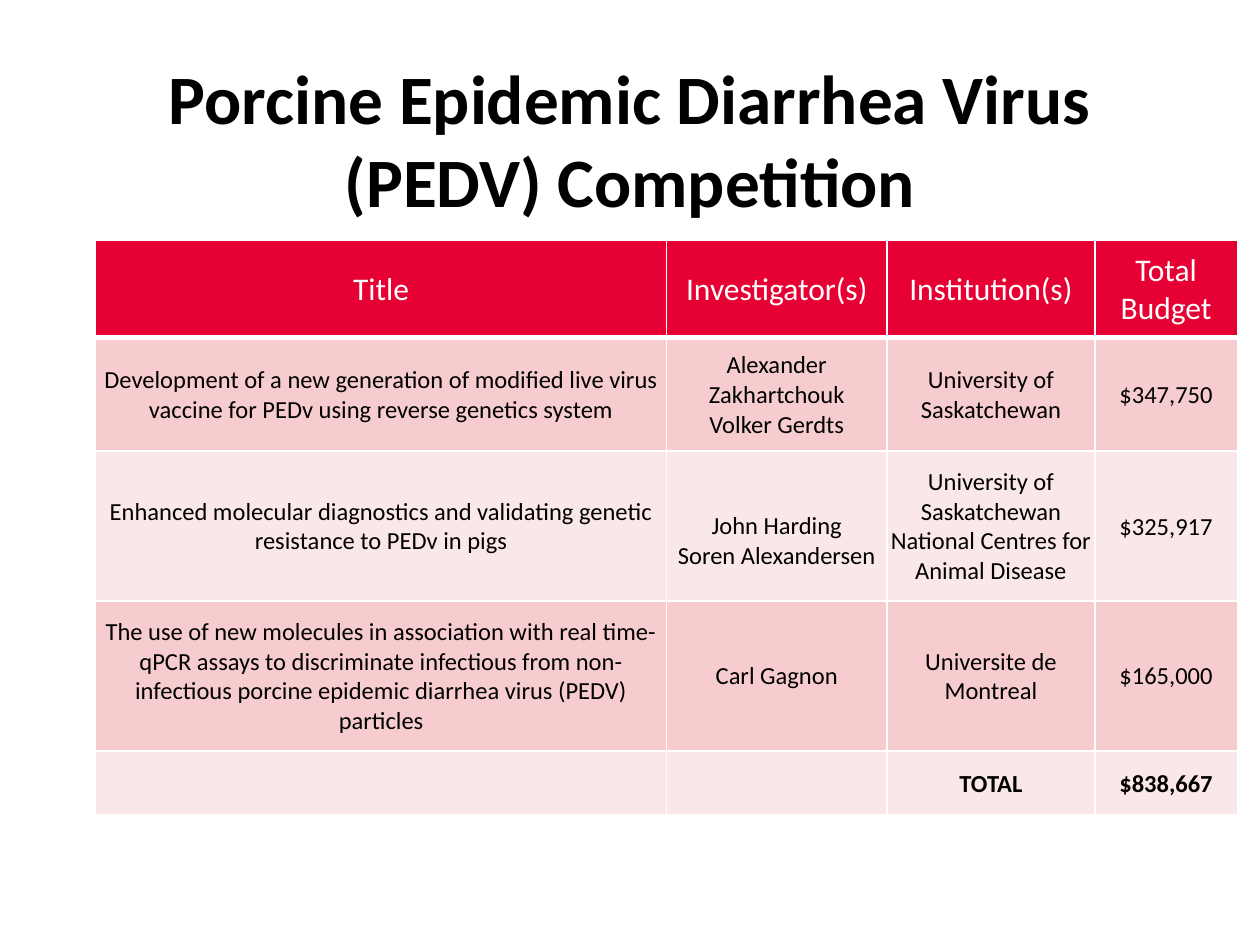
"""Build a slide that lists the funded projects of the PEDV competition."""
from lxml import etree
from pptx import Presentation
from pptx import util as u
from pptx.dml import color
from pptx.enum import text
from pptx.oxml import ns


def paint(part, tint):
    """Give a fill or a font a solid colour."""
    if hasattr(part, "solid"):
        part.solid()
        part.fore_color.rgb = color.RGBColor.from_string(tint)
    else:
        part.color.rgb = color.RGBColor.from_string(tint)


def edge(cell, side, width):
    """Draw one white border of a cell."""
    props = cell._tc.get_or_add_tcPr()
    line = etree.SubElement(props, ns.qn("a:ln" + side), w=str(u.Pt(width)))
    fill = etree.SubElement(line, ns.qn("a:solidFill"))
    etree.SubElement(fill, ns.qn("a:srgbClr"), val="FFFFFF")


deck = Presentation()
deck.slide_width, deck.slide_height = u.Inches(10), u.Inches(7.5)
slide = deck.slides.add_slide(deck.slide_layouts[5])

title = slide.shapes.title
title.left, title.top = u.Inches(0.5), u.Inches(0.47)
title.width, title.height = u.Inches(9), u.Inches(1.25)
frame = title.text_frame
frame.text = "Porcine Epidemic Diarrhea Virus (PEDV) Competition"
frame.auto_size = text.MSO_AUTO_SIZE.NONE
frame.vertical_anchor = text.MSO_ANCHOR.MIDDLE
frame.paragraphs[0].alignment = text.PP_ALIGN.CENTER
font = frame.paragraphs[0].runs[0].font
font.name, font.size, font.bold = "Calibri", u.Pt(39.6), True
paint(font, "000000")

cols = [4.53, 1.75, 1.65, 1.13]
rows = [0.77, 0.9, 1.19, 1.19, 0.51]
data = [
    ["Title", "Investigator(s)", "Institution(s)", "Total Budget"],
    ["Development of a new generation of modified live virus vaccine for PEDv "
     "using reverse genetics system",
     "Alexander Zakhartchouk\vVolker Gerdts", "University of Saskatchewan", "$347,750"],
    ["Enhanced molecular diagnostics and validating genetic resistance to PEDv in pigs",
     "John Harding\vSoren Alexandersen",
     "University of Saskatchewan\vNational Centres for Animal Disease", "$325,917"],
    ["The use of new molecules in association with real time-qPCR assays to "
     "discriminate infectious from non-infectious porcine epidemic diarrhea virus "
     "(PEDV) particles",
     "Carl Gagnon", "Universite de Montreal", "$165,000"],
    ["", "", "TOTAL", "$838,667"],
]
table = slide.shapes.add_table(
    len(rows), len(cols), u.Inches(0.76), u.Inches(1.91),
    u.Inches(sum(cols)), u.Inches(sum(rows))).table
for col, width in zip(table.columns, cols):
    col.width = u.Inches(width)

for i, (row, high) in enumerate(zip(table.rows, rows)):
    row.height = u.Inches(high)
    head, last = i == 0, i == len(rows) - 1
    tint = "E70033" if head else ("FAE7E8", "F6CCCE")[i % 2]
    size = u.Pt(18 if head else 14)
    for cell, words in zip(row.cells, data[i]):
        for side in "LRTB":
            thick = (head and side == "B") or (i == 1 and side == "T")
            edge(cell, side, 3 if thick else 1)
        paint(cell.fill, tint)
        cell.margin_left = cell.margin_right = cell.margin_top = u.Inches(0.01)
        cell.margin_bottom = 0
        cell.vertical_anchor = text.MSO_ANCHOR.MIDDLE
        cell.text_frame.text = words
        para = cell.text_frame.paragraphs[0]
        para.alignment = text.PP_ALIGN.CENTER
        for gap in para._p.findall(ns.qn("a:br")):
            etree.SubElement(gap, ns.qn("a:rPr"), sz=str(int(size.pt * 100)))
        for run in para.runs:
            run.font.name, run.font.size, run.font.bold = "Calibri", size, last
            paint(run.font, "FFFFFF" if head else "000000")

low = table.cell(2, 1)
low.vertical_anchor = text.MSO_ANCHOR.BOTTOM
low.margin_bottom = u.Inches(0.24)

deck.save("out.pptx")
